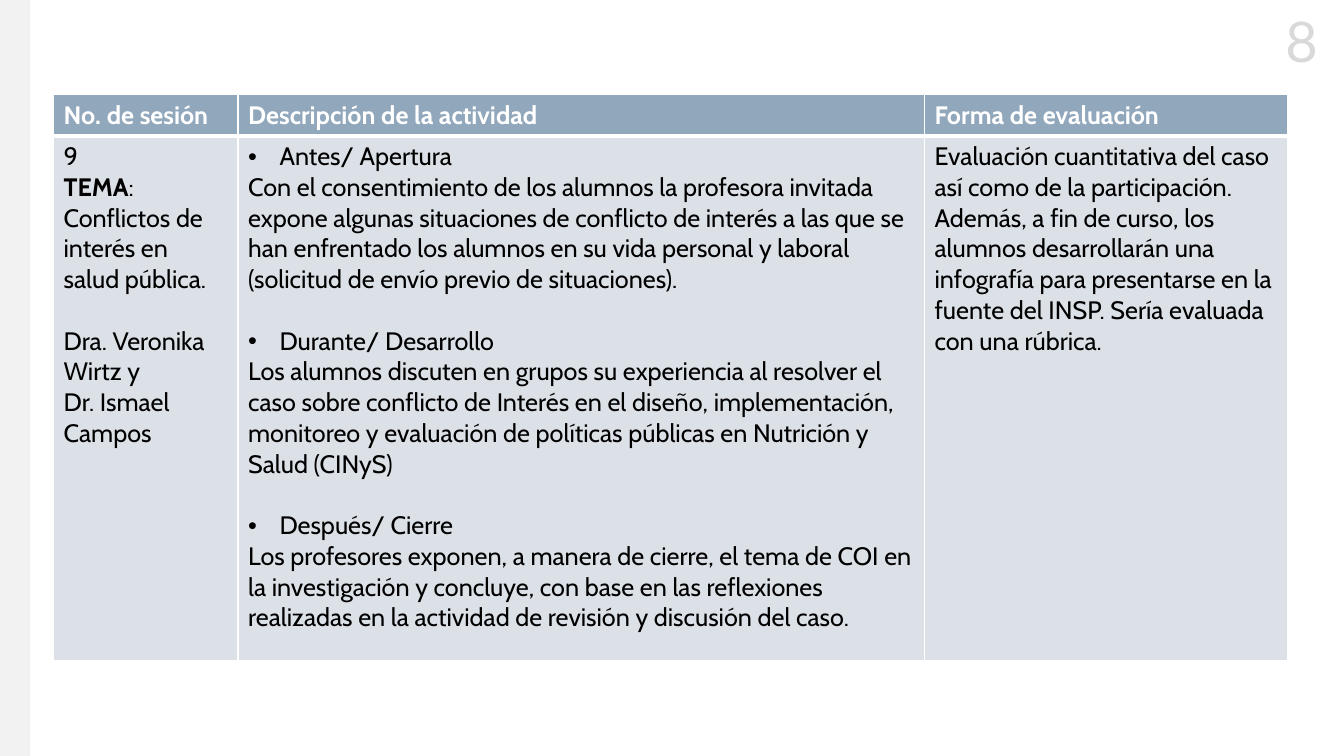
from dataclasses import dataclass

from lxml import etree
from pptx import Presentation
from pptx.dml.color import RGBColor
from pptx.enum.shapes import MSO_SHAPE
from pptx.enum.text import MSO_AUTO_SIZE, PP_ALIGN
from pptx.oxml.ns import qn
from pptx.util import Cm, Pt

RECTANGLE = MSO_SHAPE.RECTANGLE
CENTER = PP_ALIGN.CENTER
GROW = MSO_AUTO_SIZE.SHAPE_TO_FIT_TEXT

WHITE = RGBColor(0xFF, 0xFF, 0xFF)
BLACK = RGBColor(0x00, 0x00, 0x00)
STRIPE_GREY = RGBColor(0xF2, 0xF2, 0xF2)
NUMBER_GREY = RGBColor(0xD9, 0xD9, 0xD9)
HEADER_BLUE = RGBColor(0x91, 0xA7, 0xBC)
BODY_BLUE = RGBColor(0xDC, 0xE1, 0xE7)

TABLE_FONT = "Cabin"
NUMBER_FONT = "Lato"
TEXT_SIZE = Pt(18)
LINE_GAP = Pt(22)
BULLET_INDENT = Cm(0.79)
THIN = Pt(1)
THICK = Pt(3)


@dataclass(frozen=True)
class Span:
    text: str
    bold: bool = False


@dataclass(frozen=True)
class Para:
    spans: tuple[Span, ...]
    bullet: bool = False
    gap_before: bool = False


@dataclass(frozen=True)
class RowStyle:
    fill: RGBColor
    color: RGBColor
    top: int
    bottom: int


HEADER_STYLE = RowStyle(HEADER_BLUE, WHITE, THIN, THICK)
BODY_STYLE = RowStyle(BODY_BLUE, BLACK, THICK, THIN)


def plain(text: str, gap_before: bool = False) -> Para:
    return Para((Span(text),), gap_before=gap_before)


def heading(text: str) -> Para:
    return Para((Span(text, bold=True),))


def stage(title: str, text: str, first: bool = False) -> list[Para]:
    """A bulleted stage name followed by its description."""
    return [Para((Span(title),), bullet=True, gap_before=not first), plain(text)]


HEADER = [
    [heading("No. de sesión")],
    [heading("Descripción de la actividad")],
    [heading("Forma de evaluación")],
]
SESSION = [
    plain("9"),
    Para((Span("TEMA", bold=True), Span(": Conflictos de interés en salud pública."))),
    plain("Dra. Veronika Wirtz y", gap_before=True),
    plain("Dr. Ismael Campos"),
]
ACTIVITY = [
    *stage(
        "Antes/ Apertura",
        "Con el consentimiento de los alumnos la profesora invitada expone algunas "
        "situaciones de conflicto de interés a las que se han enfrentado los alumnos "
        "en su vida personal y laboral (solicitud de envío previo de situaciones).",
        first=True,
    ),
    *stage(
        "Durante/ Desarrollo",
        "Los alumnos discuten en grupos su experiencia al resolver el caso sobre "
        "conflicto de Interés en el diseño, implementación, monitoreo y evaluación "
        "de políticas públicas en Nutrición y Salud (CINyS)",
    ),
    *stage(
        "Después/ Cierre",
        "Los profesores exponen, a manera de cierre, el tema de COI en la "
        "investigación y concluye, con base en las reflexiones realizadas en la "
        "actividad de revisión y discusión del caso.",
    ),
]
EVALUATION = [
    plain(
        "Evaluación cuantitativa del caso así como de la participación. Además, a fin "
        "de curso, los alumnos desarrollarán una infografía para presentarse en la "
        "fuente del INSP. Sería evaluada con una rúbrica."
    )
]
ROWS = [(HEADER, HEADER_STYLE), ([SESSION, ACTIVITY, EVALUATION], BODY_STYLE)]
COLUMN_WIDTHS = [Cm(4.65), Cm(17.3), Cm(9.14)]
ROW_HEIGHTS = [Cm(1.04), Cm(13.21)]


def add_bullet(paragraph) -> None:
    properties = paragraph._p.get_or_add_pPr()
    properties.set("marL", str(BULLET_INDENT))
    properties.set("indent", str(-BULLET_INDENT))
    font = etree.SubElement(properties, qn("a:buFont"))
    font.set("typeface", "Arial")
    etree.SubElement(properties, qn("a:buChar")).set("char", "•")


def format_run(run, font_name: str, size: int, color: RGBColor, bold: bool = False) -> None:
    run.font.name = font_name
    run.font.size = size
    run.font.color.rgb = color
    run.font.bold = bold


def set_borders(cell, style: RowStyle) -> None:
    properties = cell._tc.get_or_add_tcPr()
    widths = {"lnL": THIN, "lnR": THIN, "lnT": style.top, "lnB": style.bottom}
    for side, width in widths.items():
        line = etree.SubElement(properties, qn(f"a:{side}"))
        line.set("w", str(width))
        fill = etree.SubElement(line, qn("a:solidFill"))
        etree.SubElement(fill, qn("a:srgbClr")).set("val", str(WHITE))


def fill_cell(cell, paras: list[Para], style: RowStyle) -> None:
    set_borders(cell, style)
    cell.fill.solid()
    cell.fill.fore_color.rgb = style.fill
    frame = cell.text_frame
    for index, para in enumerate(paras):
        paragraph = frame.add_paragraph() if index else frame.paragraphs[0]
        if para.bullet:
            add_bullet(paragraph)
        if para.gap_before:
            paragraph.space_before = LINE_GAP
        for span in para.spans:
            run = paragraph.add_run()
            run.text = span.text
            format_run(run, TABLE_FONT, TEXT_SIZE, style.color, span.bold)


def add_session_table(page) -> None:
    table = page.shapes.add_table(
        len(ROWS), len(COLUMN_WIDTHS), Cm(1.35), Cm(2.39),
        sum(COLUMN_WIDTHS), sum(ROW_HEIGHTS),
    ).table
    for column, width in zip(table.columns, COLUMN_WIDTHS):
        column.width = width
    for row, height, (contents, style) in zip(table.rows, ROW_HEIGHTS, ROWS):
        row.height = height
        for cell, paras in zip(row.cells, contents):
            fill_cell(cell, paras, style)


def add_side_stripe(page, height: int) -> None:
    stripe = page.shapes.add_shape(RECTANGLE, 0, 0, Cm(0.76), height)
    stripe.shadow.inherit = False
    stripe.fill.solid()
    stripe.fill.fore_color.rgb = STRIPE_GREY
    stripe.line.fill.background()


def add_page_number(page) -> None:
    box = page.shapes.add_textbox(Cm(31.85), Cm(0.05), Cm(1.9), Cm(1.96))
    frame = box.text_frame
    frame.word_wrap = False
    frame.auto_size = GROW
    paragraph = frame.paragraphs[0]
    paragraph.alignment = CENTER
    run = paragraph.add_run()
    run.text = "8"
    format_run(run, NUMBER_FONT, Pt(40), NUMBER_GREY)


def main() -> None:
    deck = Presentation()
    deck.slide_width = Cm(33.87)
    deck.slide_height = Cm(19.05)
    blank_layout = deck.slide_layouts.get_by_name("Blank")
    page = deck.slides.add_slide(blank_layout)
    add_page_number(page)
    add_side_stripe(page, deck.slide_height)
    add_session_table(page)
    deck.save("out.pptx")


if __name__ == "__main__":
    main()
